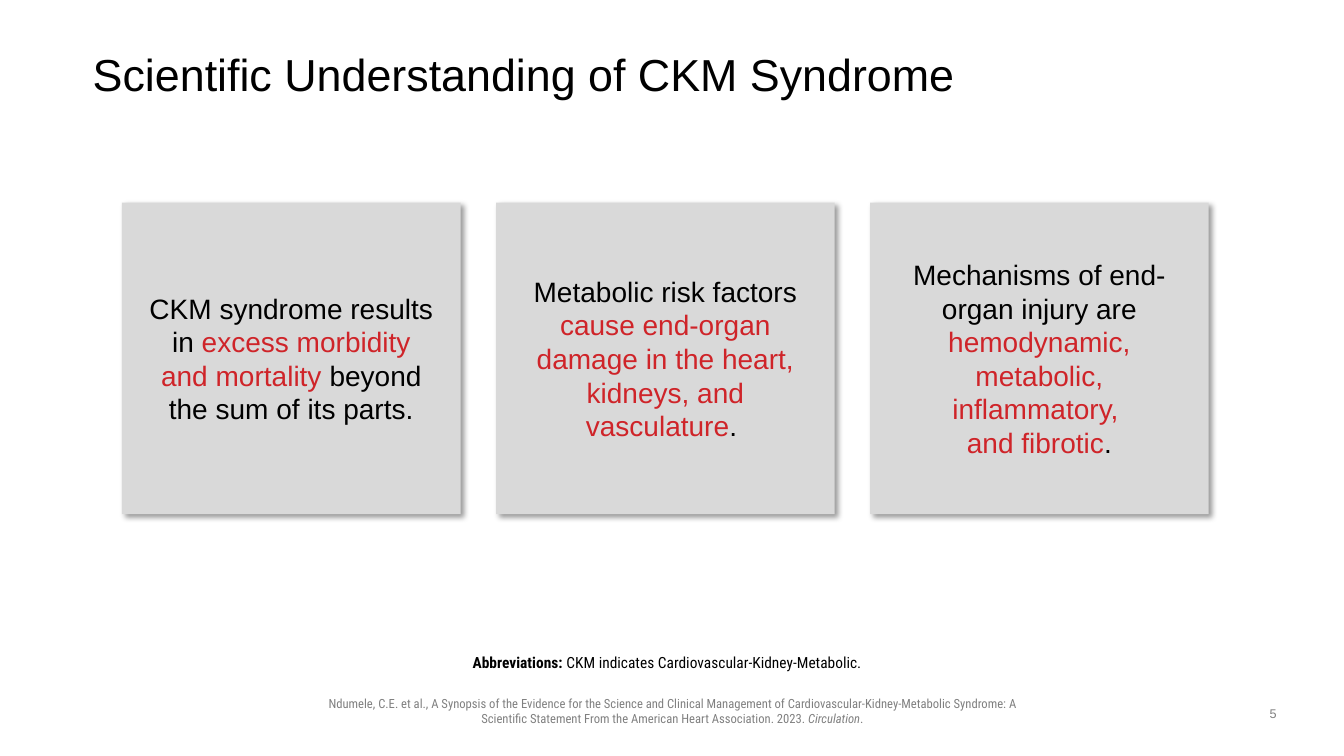
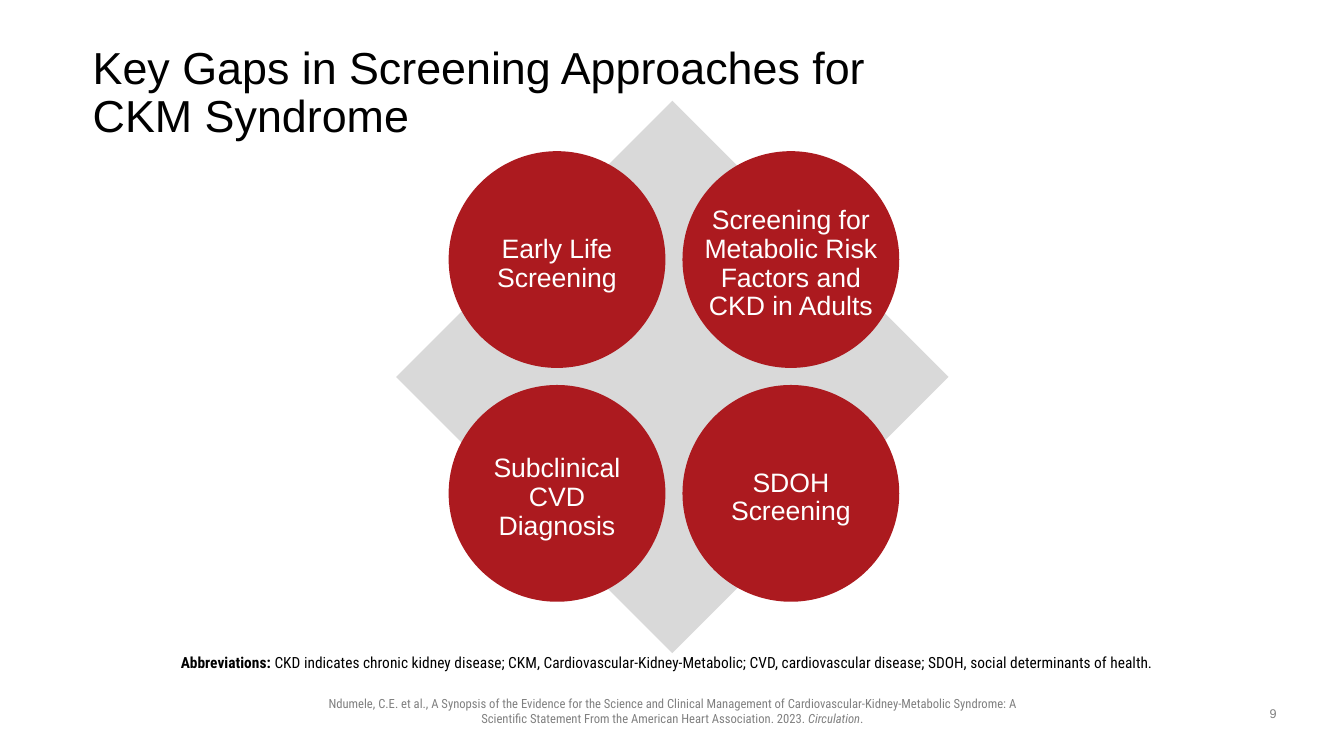
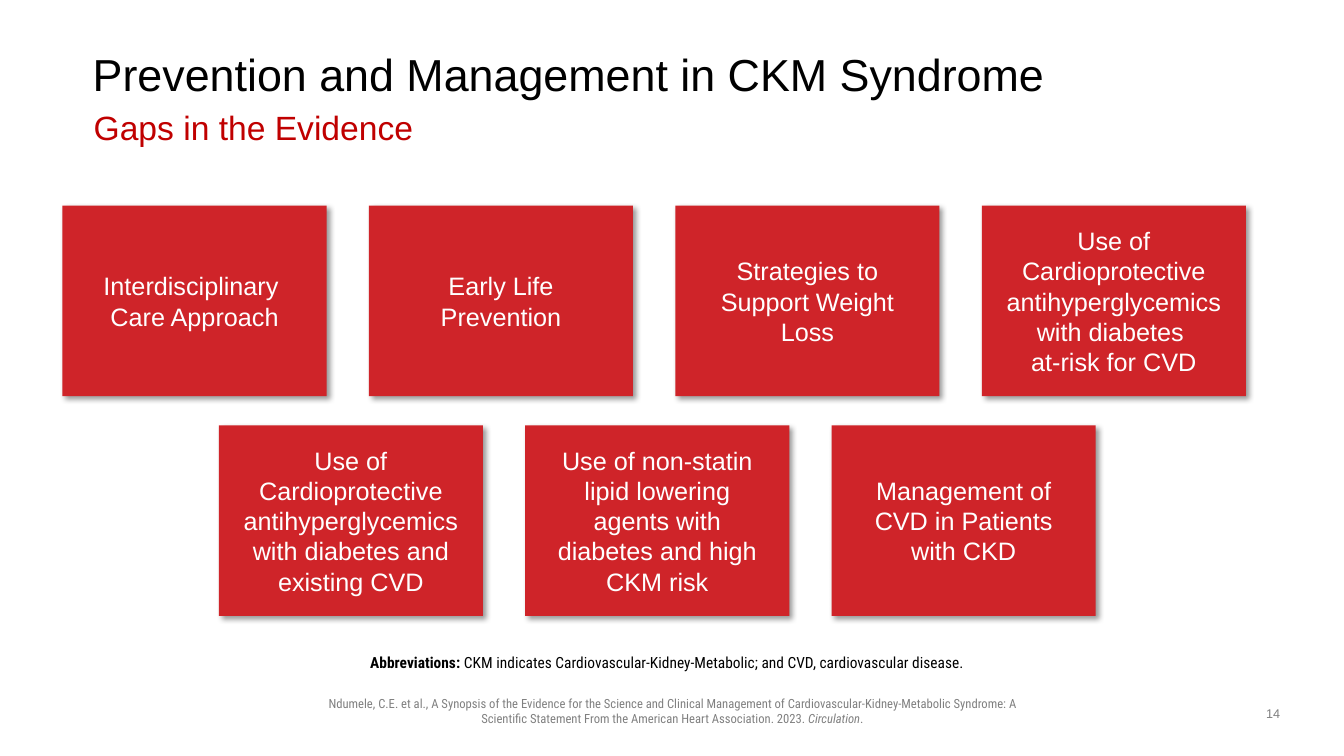
from pptx import Presentation
from pptx.dml.color import RGBColor
from pptx.enum.shapes import MSO_SHAPE as Preset
from pptx.enum.text import MSO_ANCHOR as Anchor, MSO_AUTO_SIZE as AutoSize, PP_ALIGN as Align
from pptx.oxml import parse_xml
from pptx.oxml.ns import nsdecls
from pptx.util import Inches, Pt

BLACK, WHITE, GRAY, LIGHT = "000000", "FFFFFF", "808080", "D9D9D9"
RED, DEEP_RED, SUBTITLE_RED = "CF2429", "AC1A1F", "C00000"
SANS, NARROW = "Arial", "Roboto Condensed"
SHADOW = (
    f'<a:outerShdw {nsdecls("a")} blurRad="{Pt(4)}" dist="{Pt(3)}" dir="2700000" '
    'algn="tl" rotWithShape="0"><a:srgbClr val="000000"><a:alpha val="40000"/>'
    '</a:srgbClr></a:outerShdw>'
)


def color(value):
    return RGBColor.from_string(value)


class Deck:
    """Places elements on a grid of 100 columns by 100 rows."""

    def __init__(self):
        self.file = Presentation()
        self.file.slide_width, self.file.slide_height = Inches(13.33), Inches(7.5)
        self.layout = self.file.slide_layouts.get_by_name("Two Content")
        self.page = None

    def frame(self, left, top, width, height):
        column, row = self.file.slide_width / 100, self.file.slide_height / 100
        return round(left * column), round(top * row), round(width * column), round(height * row)

    def move(self, shape, area):
        shape.left, shape.top, shape.width, shape.height = self.frame(*area)

    def set_text(self, shape, spans, size, font=SANS, ink=BLACK, align=Align.CENTER,
                 anchor=Anchor.TOP, spacing=1.0, insets=(0.1, 0.05, 0.1, 0.05)):
        """Fill a shape with one paragraph; a span is text or (text, changes)."""
        text = shape.text_frame
        text.word_wrap, text.auto_size, text.vertical_anchor = True, AutoSize.NONE, anchor
        (text.margin_left, text.margin_top,
         text.margin_right, text.margin_bottom) = map(Inches, insets)
        para = text.paragraphs[0]
        para.alignment, para.line_spacing = align, spacing
        if shape.is_placeholder:
            props = para._p.get_or_add_pPr()
            props.set("marL", "0")
            props.set("indent", "0")
            props.append(parse_xml(f'<a:buNone {nsdecls("a")}/>'))
            para.space_before = Pt(0)
        for span in spans:
            words, changes = (span, {}) if isinstance(span, str) else span
            for number, line in enumerate(words.split("\n")):
                if number:
                    para.add_line_break()
                run = para.add_run()
                run.text = line
                run.font.name, run.font.size = font, Pt(size)
                run.font.color.rgb = color(changes.get("ink", ink))
                run.font.bold = changes.get("bold", False)
                run.font.italic = changes.get("italic", False)

    def label(self, area, spans, size, **style):
        box = self.page.shapes.add_textbox(*self.frame(*area))
        self.set_text(box, spans, size, **style)
        return box

    def shape(self, preset, area, fill):
        shape = self.page.shapes.add_shape(preset, *self.frame(*area))
        shape.shadow.inherit = False
        shape.fill.solid()
        shape.fill.fore_color.rgb = color(fill)
        shape.line.fill.background()
        return shape

    def cards(self, texts, first, pitch, fill, size, ink, inset):
        """Draw a row of equal shadowed cards starting at the area `first`."""
        left, *rest = first
        for number, spans in enumerate(texts):
            card = self.shape(Preset.RECTANGLE, (left + number * pitch, *rest), fill)
            card.element.spPr.find("{*}effectLst").append(parse_xml(SHADOW))
            self.set_text(card, spans, size, ink=ink, anchor=Anchor.MIDDLE,
                          insets=(inset, 0.05, inset, 0.05))

    def add_page(self, number, title, abbreviations, subtitle=None,
                 title_area=(6.9, 5.33, 86.25, 9.6)):
        self.page = self.file.slides.add_slide(self.layout)
        heading, upper, lower = self.page.placeholders
        self.move(heading, title_area)
        self.set_text(heading, [title], 32, align=Align.LEFT, anchor=Anchor.MIDDLE,
                      spacing=0.9, insets=(0, 0, 0, 0))
        if subtitle:
            self.move(upper, (6.22, 14.13, 86.25, 7.6))
            self.set_text(upper, [subtitle], 24, ink=SUBTITLE_RED, align=Align.LEFT,
                          spacing=0.9)
        else:
            upper.element.getparent().remove(upper.element)
        self.move(lower, (6.9, 86, 86.25, 4))
        self.set_text(lower, [("Abbreviations: ", {"bold": True}), abbreviations], 11,
                      font=NARROW, spacing=0.9, insets=(0, 0.05, 0.1, 0.05))
        self.label((93.15, 92.67, 3.15, 3.47), [str(number)], 9, ink=GRAY)

    def share_citation(self, spans):
        """Put the citation on the layout, so that every page shows it."""
        box = self.label((23.63, 91.33, 52.8, 5.33), spans, 9, font=NARROW, ink=GRAY)
        box.element.nvSpPr.cNvPr.set("id", "20")
        self.layout.shapes.element.append(box.element)


def red(text):
    return text, {"ink": RED}


def understanding(deck):
    deck.add_page(5, "Scientific Understanding of CKM Syndrome ",
                  "CKM indicates Cardiovascular-Kidney-Metabolic.")
    deck.share_citation([
        "Ndumele, C.E. et al., A Synopsis of the Evidence for the Science and Clinical "
        "Management of Cardiovascular-Kidney-Metabolic Syndrome: A Scientific Statement "
        "From the American Heart Association. 2023. ",
        ("Circulation", {"italic": True}), "."])
    findings = [
        ["CKM syndrome results in ", red("excess morbidity and mortality "),
         "beyond the sum of its parts."],
        ["Metabolic risk factors ",
         red("cause end-organ damage in the heart, kidneys, and vasculature"), ". "],
        ["Mechanisms of end-organ injury are ",
         red("hemodynamic, metabolic, inflammatory, \nand fibrotic"), "."],
    ]
    deck.cards(findings, (9.08, 26.8, 25.2, 41.2), 27.83, LIGHT, 20, BLACK, 0.25)


def screening(deck):
    deck.add_page(9, "Key Gaps in Screening Approaches for CKM Syndrome",
                  "CKD indicates chronic kidney disease; CKM, Cardiovascular-Kidney-Metabolic; "
                  "CVD, cardiovascular disease; SDOH, social determinants of health.",
                  title_area=(6.9, 5.87, 62.03, 13.07))
    deck.shape(Preset.DIAMOND, (29.48, 13.33, 41.1, 73.07), LIGHT)
    gaps = ["Early Life Screening", "Screening for Metabolic Risk Factors and CKD in Adults",
            "Subclinical CVD Diagnosis", "SDOH Screening"]
    for number, gap in enumerate(gaps):
        row, column = divmod(number, 2)
        left, top = 33.38 + column * 17.4, 20 + row * 30.93
        deck.shape(Preset.OVAL, (left, top, 16.13, 28.67), DEEP_RED)
        deck.label((left + 0.79, top + 2, 14.55, 25.87), [gap], 19, ink=WHITE,
                   anchor=Anchor.MIDDLE, spacing=0.9, insets=(0.08,) * 4)


def prevention(deck):
    deck.add_page(14, "Prevention and Management in CKM Syndrome",
                  "CKM indicates Cardiovascular-Kidney-Metabolic; and CVD, cardiovascular disease.",
                  subtitle="Gaps in the Evidence")
    rows = [
        (4.65, 27.2, ["Interdisciplinary \nCare Approach", "Early Life Prevention",
                      "Strategies to Support Weight Loss",
                      "Use of Cardioprotective antihyperglycemics with diabetes \nat-risk for CVD"]),
        (16.28, 56.27, ["Use of Cardioprotective antihyperglycemics with diabetes and existing CVD",
                        "Use of non-statin lipid lowering agents with diabetes and high CKM risk",
                        "Management of CVD in Patients with CKD"]),
    ]
    for left, top, topics in rows:
        deck.cards([[topic] for topic in topics], (left, top, 19.65, 25.2), 22.8,
                   RED, 18, WHITE, 0.22)


def main():
    deck = Deck()
    for build in (understanding, screening, prevention):
        build(deck)
    deck.file.save("out.pptx")


if __name__ == "__main__":
    main()
